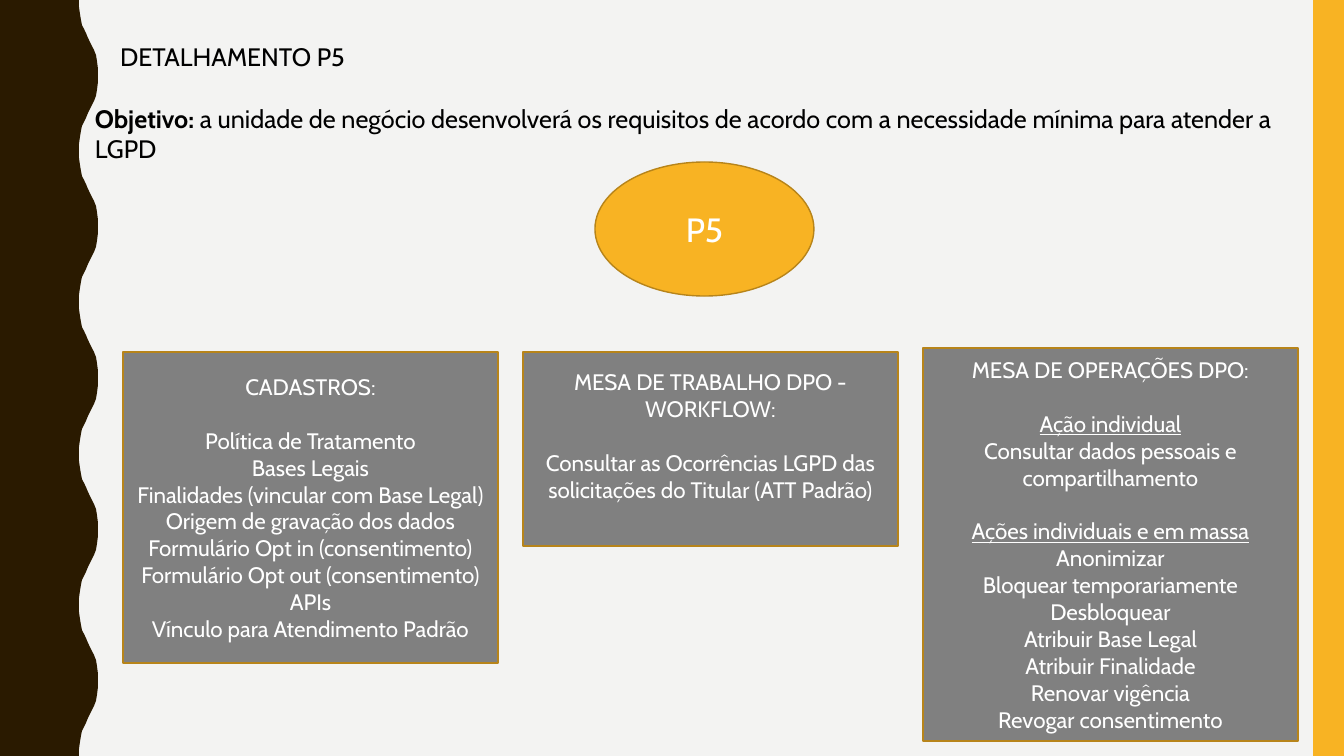
from dataclasses import dataclass

from pptx import Presentation
from pptx import util as u
from pptx.dml.color import RGBColor
from pptx.enum import shapes, text

SLIDE_W, SLIDE_H = 1344, 756
PX = 12192000 / SLIDE_W
FONT = "Cabin"
COLORS = {
    "background": "F3F3F2",
    "wave": "2A1A00",
    "accent": "F8B323",
    "outline": "B7841A",
    "card": "808080",
    "dark_text": "000000",
    "light_text": "FFFFFF",
}
WAVE_COUNT = 5
WAVE_RISE = [
    (79, 0), (79, 7), (80, 14), (81, 20), (82, 25), (84, 29), (86, 33), (88, 38),
    (90, 42), (92, 46), (94, 50), (96, 55), (97, 61), (98, 69), (98, 76),
]
CARD_LEFT, CARD_STEP, CARD_W = 123, 400, 375
BLANK_LINE = u.Pt(19.2)


@dataclass(frozen=True)
class Box:
    x: int
    y: int
    w: int
    h: int


@dataclass(frozen=True)
class Line:
    text: str
    gap: bool = False
    underline: bool = False


@dataclass(frozen=True)
class Card:
    y: int
    h: int
    lines: tuple[Line, ...]
    bottom_inset: int = 5


CARDS = [
    Card(352, 311, (
        Line("CADASTROS:"),
        Line("Política de Tratamento", gap=True),
        Line("Bases Legais"),
        Line("Finalidades (vincular com Base Legal)"),
        Line("Origem de gravação dos dados"),
        Line("Formulário Opt in (consentimento)"),
        Line("Formulário Opt out (consentimento)"),
        Line("APIs"),
        Line("Vínculo para Atendimento Padrão"),
    )),
    Card(352, 194, (
        Line("MESA DE TRABALHO DPO - WORKFLOW:"),
        Line("Consultar as Ocorrências LGPD das solicitações do Titular (ATT Padrão)", gap=True),
    ), bottom_inset=32),
    Card(348, 393, (
        Line("MESA DE OPERAÇÕES DPO:"),
        Line("Ação individual", gap=True, underline=True),
        Line("Consultar dados pessoais e compartilhamento"),
        Line("Ações individuais e em massa", gap=True, underline=True),
        Line("Anonimizar"),
        Line("Bloquear temporariamente"),
        Line("Desbloquear"),
        Line("Atribuir Base Legal"),
        Line("Atribuir Finalidade"),
        Line("Renovar vigência"),
        Line("Revogar consentimento"),
    )),
]


def px(n: int) -> u.Emu:
    return u.Emu(round(n * PX))


def rgb(name: str) -> RGBColor:
    return RGBColor.from_string(COLORS[name])


def style_font(font, size: int, color: str) -> None:
    font.name = FONT
    font.size = u.Pt(size)
    font.color.rgb = rgb(color)


def paint(sp, fill: str, outline: str | None = None) -> None:
    sp.shadow.inherit = False
    sp.fill.solid()
    sp.fill.fore_color.rgb = rgb(fill)
    if outline:
        sp.line.color.rgb = rgb(outline)
        sp.line.width = u.Pt(1)
    else:
        sp.line.fill.background()


def add_shape(s, kind, box: Box, fill: str, outline: str | None = None):
    sp = s.shapes.add_shape(kind, px(box.x), px(box.y), px(box.w), px(box.h))
    paint(sp, fill, outline)
    return sp


def write_lines(sp, lines: tuple[Line, ...], size: int, bottom_inset: int = 5) -> None:
    tf = sp.text_frame
    tf.word_wrap = True
    tf.vertical_anchor = text.MSO_ANCHOR.MIDDLE
    tf.margin_bottom = px(bottom_inset)
    tf.text = "\n".join(line.text for line in lines)
    for p, line in zip(tf.paragraphs, lines):
        p.alignment = text.PP_ALIGN.CENTER
        if line.gap:
            p.space_before = BLANK_LINE
        r = p.runs[0]
        style_font(r.font, size, "light_text")
        if line.underline:
            r.font.underline = True


def add_wave(s) -> None:
    period = SLIDE_H / WAVE_COUNT
    crest = WAVE_RISE + [(x, period - y) for x, y in reversed(WAVE_RISE[:-1])]
    points = [(x, round(i * period + y)) for i in range(WAVE_COUNT) for x, y in crest]
    builder = s.shapes.build_freeform(0, 0, scale=PX)
    builder.add_line_segments(points + [(0, SLIDE_H)], close=True)
    paint(builder.convert_to_shape(), "wave")


def set_title(s) -> None:
    sp = s.shapes.title
    sp.left, sp.top, sp.width, sp.height = px(110), px(36), px(250), px(41)
    tf = sp.text_frame
    tf.text = "DETALHAMENTO P5"
    tf.word_wrap = False
    tf.auto_size = text.MSO_AUTO_SIZE.NONE
    tf.vertical_anchor = text.MSO_ANCHOR.TOP
    p = tf.paragraphs[0]
    p.alignment = text.PP_ALIGN.LEFT
    style_font(p.runs[0].font, 18, "dark_text")


def add_objective(s) -> None:
    tf = s.shapes.add_textbox(px(85), px(98), px(1255), px(41)).text_frame
    tf.word_wrap = True
    p = tf.paragraphs[0]
    for wording, bold in (
        ("Objetivo: ", True),
        ("a unidade de negócio desenvolverá os requisitos de acordo com a "
         "necessidade mínima para atender a LGPD", False),
    ):
        r = p.add_run()
        r.text = wording
        r.font.bold = bold
        style_font(r.font, 18, "dark_text")


def main() -> None:
    prs = Presentation()
    prs.slide_width, prs.slide_height = px(SLIDE_W), px(SLIDE_H)
    s = prs.slides.add_slide(prs.slide_layouts[5])
    s.background.fill.solid()
    s.background.fill.fore_color.rgb = rgb("background")

    add_wave(s)
    add_shape(s, shapes.MSO_SHAPE.RECTANGLE, Box(1313, 0, 31, SLIDE_H), "accent")
    set_title(s)
    stage = add_shape(s, shapes.MSO_SHAPE.OVAL, Box(595, 162, 219, 134), "accent", "outline")
    write_lines(stage, (Line("P5"),), 24)
    add_objective(s)
    for i, card in enumerate(CARDS):
        box = Box(CARD_LEFT + i * CARD_STEP, card.y, CARD_W, card.h)
        sp = add_shape(s, shapes.MSO_SHAPE.RECTANGLE, box, "card", "outline")
        write_lines(sp, card.lines, 16, card.bottom_inset)

    prs.save("out.pptx")


if __name__ == "__main__":
    main()
